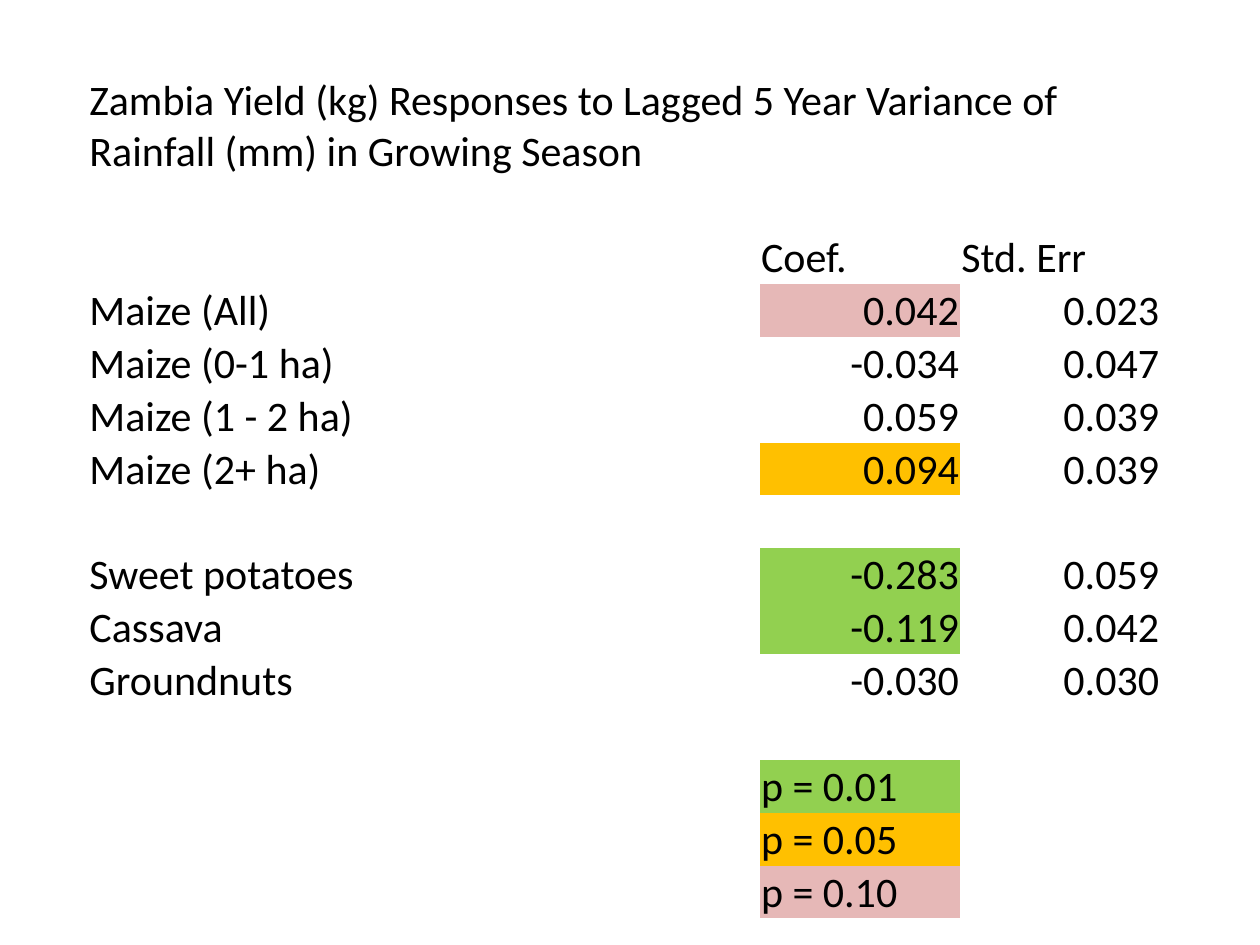
"""Build a slide with a table of Zambian crop yield responses to rainfall variance."""
from pptx import Presentation
from pptx.dml.color import RGBColor
from pptx.enum import text
from pptx.oxml import ns
from pptx.util import Inches, Pt

BLACK = RGBColor(0x00, 0x00, 0x00)
GREEN = RGBColor(0x92, 0xD0, 0x50)
AMBER = RGBColor(0xFF, 0xC0, 0x00)
PINK = RGBColor(0xE6, 0xB8, 0xB7)
PLAIN_STYLE = "{2D5ABB26-0587-4C30-8999-92F81FD0307C}"

TITLE = "Zambia Yield (kg) Responses to Lagged 5 Year Variance of Rainfall (mm) in Growing Season"
BLANK = ("", "", "", None)
ROWS = [
    (TITLE, "", "", None),
    BLANK,
    ("", "Coef.", "Std. Err", None),
    ("Maize (All)", "0.042", "0.023", PINK),
    ("Maize (0-1 ha)", "-0.034", "0.047", None),
    ("Maize (1 - 2 ha)", "0.059", "0.039", None),
    ("Maize (2+ ha)", "0.094", "0.039", AMBER),
    BLANK,
    ("Sweet potatoes", "-0.283", "0.059", GREEN),
    ("Cassava", "-0.119", "0.042", GREEN),
    ("Groundnuts", "-0.030", "0.030", None),
    BLANK,
    ("", "p = 0.01", "", GREEN),
    ("", "p = 0.05", "", AMBER),
    ("", "p = 0.10", "", PINK),
]
COLUMN_WIDTHS = [5.33, 1.59, 1.59]
TITLE_HEIGHT, ROW_HEIGHT = 0.82, 0.42


def write_cell(cell, words, align=text.PP_ALIGN.LEFT, fill=None, size=24):
    cell.margin_left = cell.margin_right = cell.margin_top = Inches(0.01)
    cell.margin_bottom = 0
    cell.vertical_anchor = text.MSO_ANCHOR.BOTTOM
    if fill is None:
        cell.fill.background()
    else:
        cell.fill.solid()
        cell.fill.fore_color.rgb = fill
    if words:
        para = cell.text_frame.paragraphs[0]
        para.alignment = align
        span = para.add_run()
        span.text = words
        span.font.name = "Calibri"
        span.font.size = Pt(size)
        span.font.color.rgb = BLACK


def main():
    deck = Presentation()
    deck.slide_width, deck.slide_height = Inches(10), Inches(7.5)
    page = deck.slides.add_slide(deck.slide_layouts[6])

    heights = [TITLE_HEIGHT] + [ROW_HEIGHT] * (len(ROWS) - 1)
    frame = page.shapes.add_table(
        len(ROWS), len(COLUMN_WIDTHS), Inches(0.7), Inches(0.59),
        Inches(sum(COLUMN_WIDTHS)), Inches(sum(heights)))
    table = frame.table
    table.first_row = table.horz_banding = False
    for style in frame.element.iter(ns.qn("a:tableStyleId")):
        style.text = PLAIN_STYLE

    for column, width in zip(table.columns, COLUMN_WIDTHS):
        column.width = Inches(width)
    for row, height, (*entries, shade) in zip(table.rows, heights, ROWS):
        row.height = Inches(height)
        for index, (cell, words) in enumerate(zip(row.cells, entries)):
            numeric = words.lstrip("-").startswith("0.")
            align = text.PP_ALIGN.RIGHT if numeric else text.PP_ALIGN.LEFT
            write_cell(cell, words, align=align, fill=shade if index == 1 else None)
    table.cell(0, 0).merge(table.cell(0, 2))

    deck.save("out.pptx")


if __name__ == "__main__":
    main()
